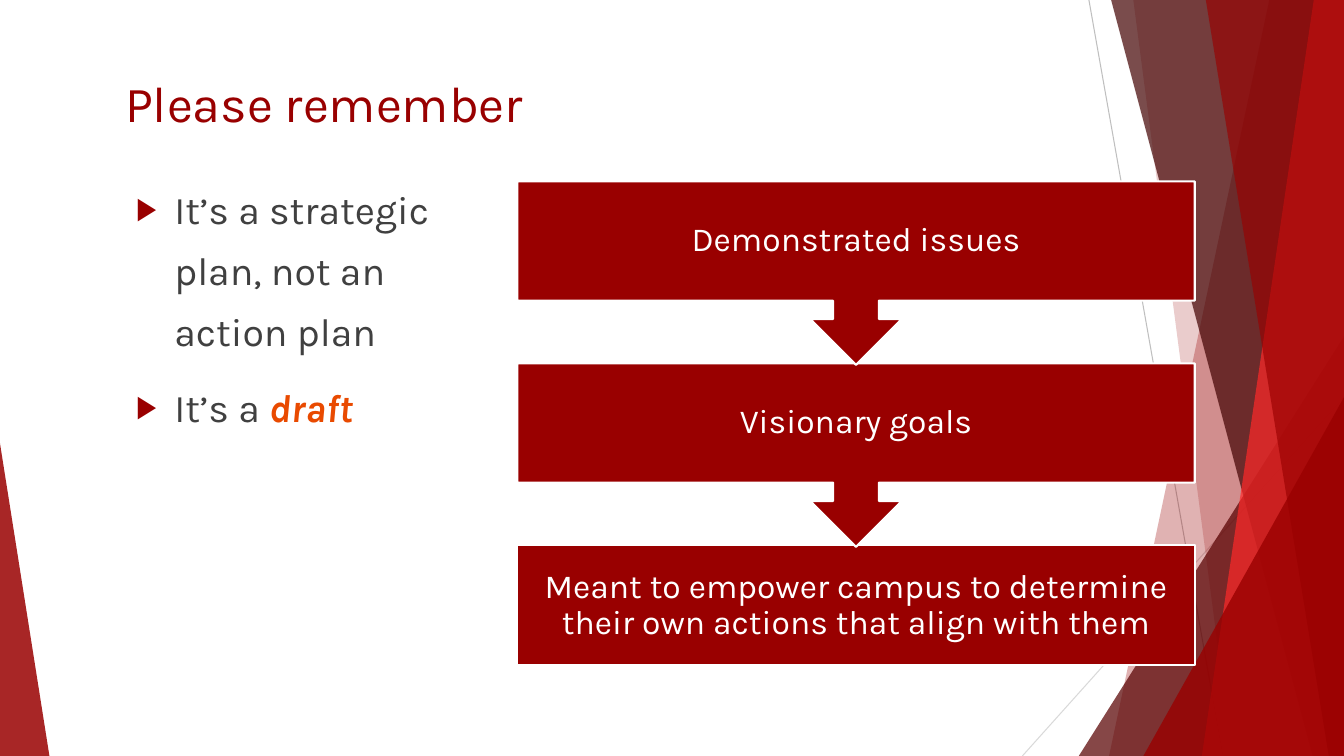
from lxml import etree
from pptx import Presentation
from pptx.dml.color import RGBColor
from pptx.enum import shapes as kinds, text as txt
from pptx.oxml.ns import qn
from pptx.util import Inches, Pt

# Content
TITLE = "Please remember"
POINTS = [
    [("It’s a strategic plan, not an action plan", {})],
    [("It’s a ", {}), ("draft", {"color": "accent", "bold": True, "italic": True})],
]
STEPS = [
    "Demonstrated issues",
    "Visionary goals",
    "Meant to empower campus to determine their own actions that align with them",
]

# Theme
THEME = {
    "font": "Karla",
    "main": "990000", "deep": "580101", "dark": "420101", "bright": "FF2929",
    "text": "404040", "accent": "E94A00", "white": "FFFFFF",
    "grey": "BFBFBF", "pale": "D9D9D9",
    "title_size": 36, "body_size": 28, "step_size": 24,
}

# Backdrop, from back to front
WIDTH, HEIGHT = 13.33, 7.5
RAYS = [  # start, end, colour
    ((10.8, 0), (12.13, HEIGHT), "grey"),
    ((WIDTH, 3.94), (10.14, HEIGHT), "pale"),
]
FACETS = [  # top left x, bottom left x, colour, opacity %; or a triangle's box
    ("band", (12.59, 11), "main", 30),
    ("band", (11.24, 12.22), "main", 20),
    ("triangle", (10.7, 3.34, 2.63, 1), "deep", 72),
    ("band", (11.02, 13.02), "dark", 70),
    ("band", (13.03, 11.92), "bright", 70),
    ("band", (11.96, 13.18), "main", 65),
    ("triangle", (11.34, 3.94, 1.99, 1), "main", 80),
    ("triangle", (0, 4.4, 0.49, 0), "main", 85),
]

# Step boxes
STEP_LEFT, STEP_TOP, STEP_WIDTH = 5.13, 1.8, 6.72
STEP_PITCH, BOX_HEIGHT, CALLOUT_HEIGHT = 1.805, 1.19, 1.82


def color(name):
    return RGBColor.from_string(THEME[name])


def place(shape, left, top, width, height):
    shape.left, shape.top = Inches(left), Inches(top)
    shape.width, shape.height = Inches(width), Inches(height)


def add_text(paragraph, words, size, color_name, bold=False, italic=False):
    run = paragraph.add_run()
    run.text = words
    font = run.font
    font.name, font.size = THEME["font"], Pt(THEME[size])
    font.bold, font.italic = bold, italic
    font.color.rgb = color(color_name)


def add_bullet(paragraph):
    props = paragraph._p.get_or_add_pPr()
    props.set("marL", str(Inches(0.38)))
    props.set("indent", str(-Inches(0.38)))
    tint = etree.SubElement(props, qn("a:buClr"))
    etree.SubElement(tint, qn("a:srgbClr"), val=THEME["main"])
    etree.SubElement(props, qn("a:buSzPct"), val="80000")
    etree.SubElement(props, qn("a:buChar"), char="▶")


def add_ray(slide, start, end, color_name):
    ray = slide.shapes.add_connector(
        kinds.MSO_CONNECTOR.STRAIGHT, *map(Inches, start + end))
    ray.line.color.rgb = color(color_name)
    ray.line.width = Pt(0.75)
    etree.SubElement(ray._element.spPr, qn("a:effectLst"))


def add_facet(slide, kind, numbers, color_name, opacity):
    if kind == "band":
        top_x, bottom_x = numbers
        corners = [(WIDTH, 0), (WIDTH, HEIGHT), (bottom_x, HEIGHT)]
        outline = slide.shapes.build_freeform(Inches(top_x), 0)
        outline.add_line_segments([(Inches(x), Inches(y)) for x, y in corners])
        facet = outline.convert_to_shape()
    else:
        left, top, width, apex = numbers
        facet = slide.shapes.add_shape(
            kinds.MSO_SHAPE.ISOSCELES_TRIANGLE, 0, 0, 0, 0)
        place(facet, left, top, width, HEIGHT - top)
        facet.adjustments[0] = apex
    facet.shadow.inherit = False
    facet.line.fill.background()
    facet.fill.solid()
    facet.fill.fore_color.rgb = color(color_name)
    tint = facet._element.spPr.find(".//" + qn("a:srgbClr"))
    etree.SubElement(tint, qn("a:alpha"), val=str(opacity * 1000))


def add_step(slide, index, words):
    last = index == len(STEPS) - 1
    preset = kinds.MSO_SHAPE.RECTANGLE if last else kinds.MSO_SHAPE.DOWN_ARROW_CALLOUT
    step = slide.shapes.add_shape(preset, 0, 0, 0, 0)
    place(step, STEP_LEFT, STEP_TOP + index * STEP_PITCH, STEP_WIDTH,
          BOX_HEIGHT if last else CALLOUT_HEIGHT)
    step.shadow.inherit = False
    step.fill.solid()
    step.fill.fore_color.rgb = color("main")
    step.line.color.rgb = color("white")
    step.line.width = Pt(1.5)
    frame = step.text_frame
    frame.word_wrap = True
    frame.vertical_anchor = txt.MSO_ANCHOR.MIDDLE
    frame.margin_left = frame.margin_right = Inches(0.19)
    frame.margin_top = frame.margin_bottom = Inches(0.19)
    paragraph = frame.paragraphs[0]
    paragraph.alignment = txt.PP_ALIGN.CENTER
    paragraph.line_spacing = 0.9
    add_text(paragraph, words, "step_size", "white")


def main():
    deck = Presentation()
    deck.slide_width, deck.slide_height = Inches(WIDTH), Inches(HEIGHT)
    slide = deck.slides.add_slide(deck.slide_layouts[1])
    title, body = slide.shapes.title, slide.placeholders[1]

    # Backdrop
    for ray in RAYS:
        add_ray(slide, *ray)
    for facet in FACETS:
        add_facet(slide, *facet)

    # Title and list, lifted in front of the backdrop
    for holder in (title, body):
        slide.shapes._spTree.append(holder._element)
        holder.text_frame.word_wrap = True
        holder.text_frame.auto_size = txt.MSO_AUTO_SIZE.NONE
        holder.text_frame.vertical_anchor = txt.MSO_ANCHOR.TOP
    place(title, 1.14, 0.67, 9, 1.44)
    heading = title.text_frame.paragraphs[0]
    heading.alignment = txt.PP_ALIGN.LEFT
    add_text(heading, TITLE, "title_size", "main")

    place(body, 1.25, 1.65, 3.59, 4.41)
    for index, runs in enumerate(POINTS):
        frame = body.text_frame
        point = frame.add_paragraph() if index else frame.paragraphs[0]
        point.line_spacing = 1.3
        point.space_before = Pt(10)
        add_bullet(point)
        for words, look in runs:
            add_text(point, words, "body_size", **{"color_name": look.get("color", "text"),
                     "bold": look.get("bold", False), "italic": look.get("italic", False)})

    # Steps, last one at the back so that each arrow tip overlaps the next box
    for index, words in reversed(list(enumerate(STEPS))):
        add_step(slide, index, words)

    deck.save("out.pptx")


if __name__ == "__main__":
    main()
